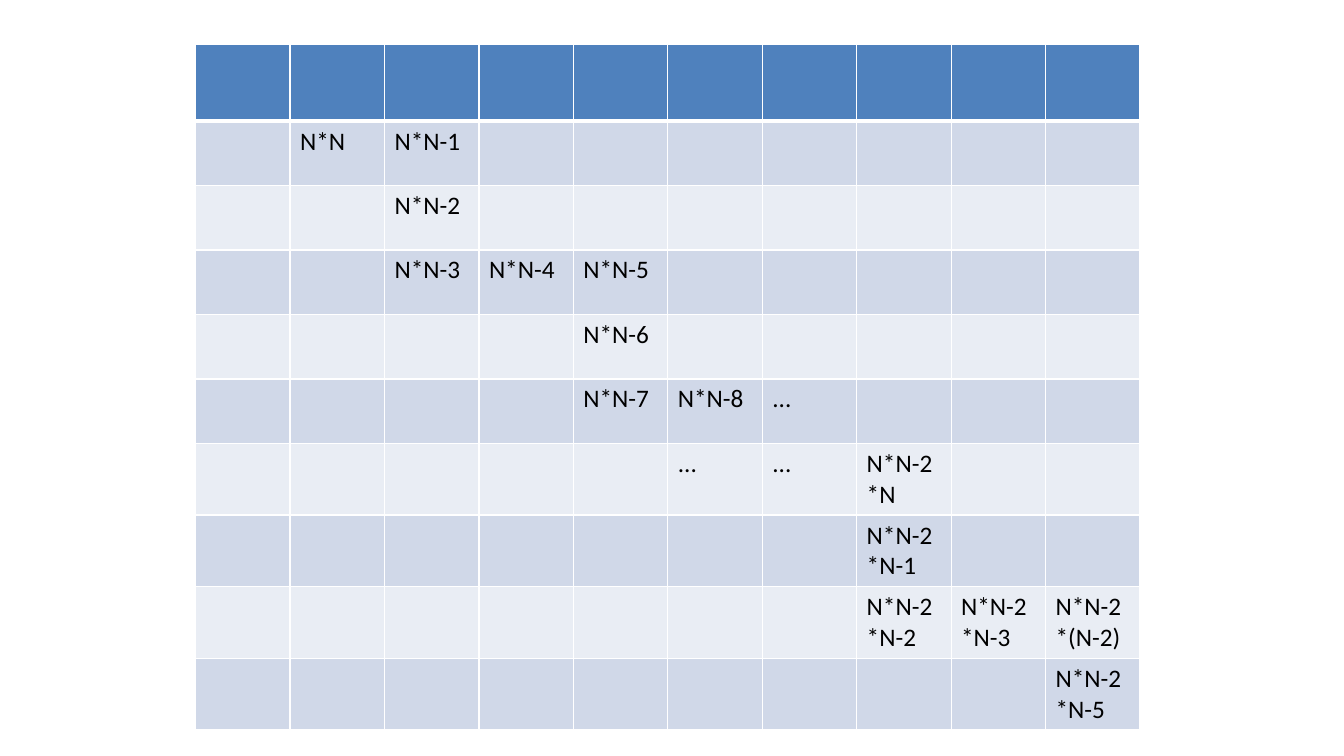
from lxml import etree
from pptx import Presentation
from pptx.dml.color import RGBColor
from pptx.oxml import ns
from pptx.util import Inches, Pt

COLORS = {"header": "4F81BD", "odd": "D0D8E8", "even": "E9EDF4",
          "grid": "FFFFFF", "text": "000000"}
SIZE = 10
STEPS = {
    1: {1: "N*N", 2: "N*N-1"},
    2: {2: "N*N-2"},
    3: {2: "N*N-3", 3: "N*N-4", 4: "N*N-5"},
    4: {4: "N*N-6"},
    5: {4: "N*N-7", 5: "N*N-8", 6: "..."},
    6: {5: "...", 6: "...", 7: "N*N-2*N"},
    7: {7: "N*N-2*N-1"},
    8: {7: "N*N-2*N-2", 8: "N*N-2*N-3", 9: "N*N-2*(N-2)"},
    9: {9: "N*N-2*N-5"},
}


def add_border(cell, side, points):
    line = etree.SubElement(cell._tc.get_or_add_tcPr(), ns.qn(f"a:{side}"), w=str(Pt(points)))
    fill = etree.SubElement(line, ns.qn("a:solidFill"))
    etree.SubElement(fill, ns.qn("a:srgbClr"), val=COLORS["grid"])


prs = Presentation()
prs.slide_width, prs.slide_height = Inches(13.33), Inches(7.5)
slide = prs.slides.add_slide(prs.slide_layouts[6])

spiral = slide.shapes.add_table(
    SIZE, SIZE, Inches(1.94), Inches(0.44), Inches(9.37), Inches(6.79)).table
for column in spiral.columns:
    column.width = Inches(9.37 / SIZE)
for row, height in zip(spiral.rows, [0.76] + [0.64] * 5 + [0.71] * 4):
    row.height = Inches(height)

for r in range(SIZE):
    band = "header" if r == 0 else "odd" if r % 2 else "even"
    for c in range(SIZE):
        cell = spiral.cell(r, c)
        for side in ("lnL", "lnR", "lnT", "lnB"):
            thick = (r, side) in ((0, "lnB"), (1, "lnT"))
            add_border(cell, side, 3 if thick else 1)
        cell.fill.solid()
        cell.fill.fore_color.rgb = RGBColor.from_string(COLORS[band])
        step = STEPS.get(r, {}).get(c)
        if step:
            cell.text_frame.text = step
            font = cell.text_frame.paragraphs[0].runs[0].font
            font.name, font.size = "Calibri", Pt(18)
            font.color.rgb = RGBColor.from_string(COLORS["text"])

prs.save("out.pptx")
